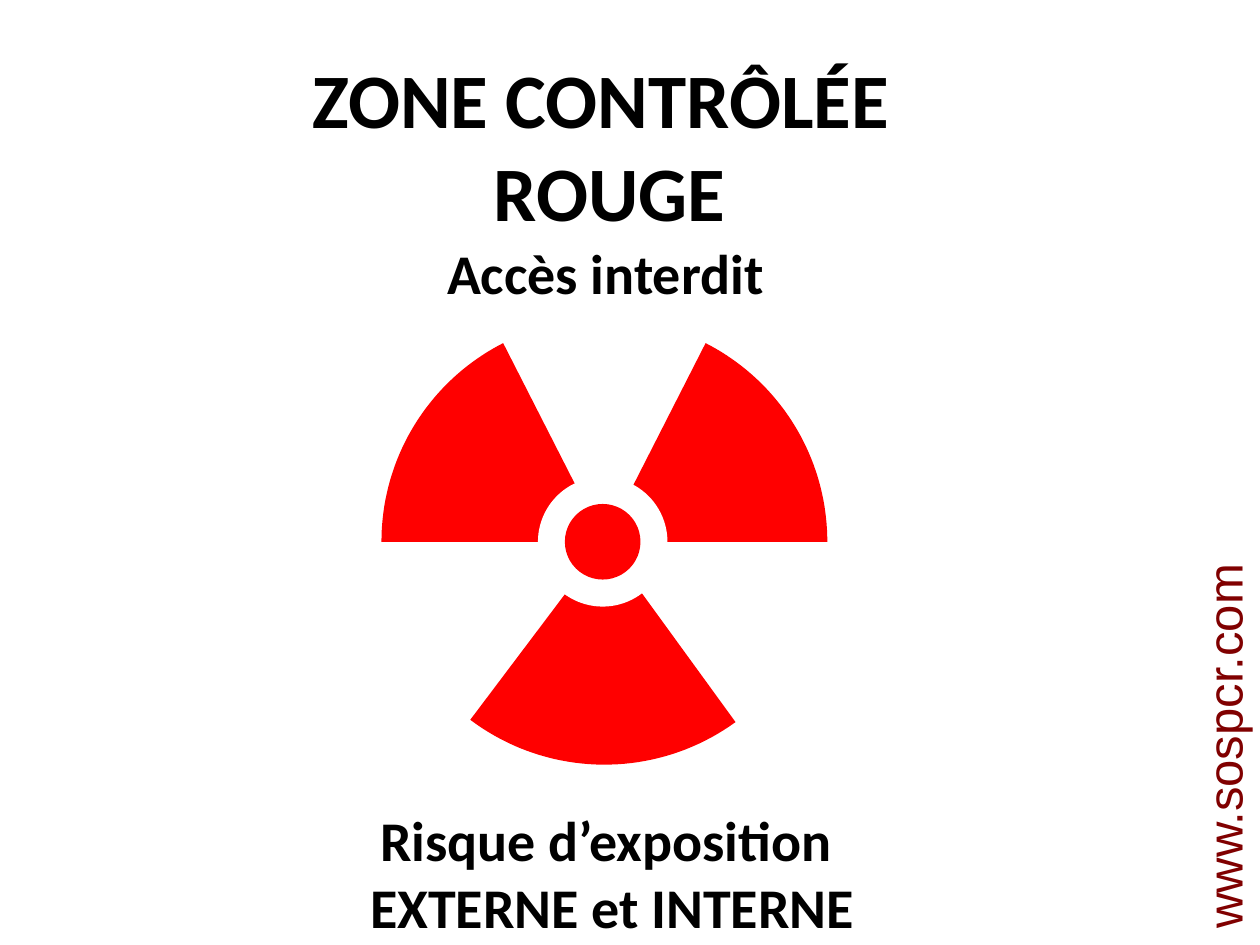
from math import cos, radians, sin

from pptx import Presentation
from pptx.dml.color import RGBColor
from pptx.enum.shapes import MSO_SHAPE
from pptx.enum.text import MSO_ANCHOR, MSO_AUTO_SIZE, PP_ALIGN
from pptx.util import Pt

COLORS = {"red": "FF0000", "white": "FFFFFF", "black": "000000", "site": "800000"}


def paint(sp, color):
    sp.shadow.inherit = False
    sp.fill.solid()
    sp.fill.fore_color.rgb = RGBColor.from_string(COLORS[color])
    sp.line.fill.background()


def place(sp, box):
    sp.left, sp.top, sp.width, sp.height = (Pt(v) for v in box)


def write(sp, lines, size, font="Calibri", color="black", bold=True, wrap=False):
    tf = sp.text_frame
    tf.word_wrap = wrap
    tf.auto_size = MSO_AUTO_SIZE.NONE
    tf.vertical_anchor = MSO_ANCHOR.TOP
    for i, line in enumerate(lines):
        p = tf.add_paragraph() if i else tf.paragraphs[0]
        p.alignment = PP_ALIGN.CENTER
        r = p.add_run()
        r.text = line
        r.font.name = font
        r.font.size = Pt(size)
        r.font.bold = bold
        r.font.color.rgb = RGBColor.from_string(COLORS[color])


def add_title(s, box):
    sp = s.shapes.title
    place(sp, box)
    write(sp, ["ZONE CONTRÔLÉE ", "ROUGE"], 44, wrap=True)


def add_label(s, box, lines, size=32, **style):
    sp = s.shapes.add_textbox(*(Pt(v) for v in box))
    write(sp, lines, size, **style)
    return sp


def add_blade(group, cx, cy, radius, start, end, steps=40):
    angles = [radians(start + (end - start) * i / steps) for i in range(steps + 1)]
    arc = [(Pt(cx + radius * cos(a)), Pt(cy + radius * sin(a))) for a in angles]
    builder = group.shapes.build_freeform(Pt(cx), Pt(cy))
    builder.add_line_segments(arc, close=True)
    paint(builder.convert_to_shape(), "red")


def add_disc(group, cx, cy, diameter, color):
    corner = (cx - diameter / 2, cy - diameter / 2)
    sp = group.shapes.add_shape(
        MSO_SHAPE.OVAL, *(Pt(v) for v in (*corner, diameter, diameter)))
    paint(sp, color)


def add_trefoil(s, box):
    left, top, width, height = box
    cx, cy, radius = left + width / 2, top + height - 129, width / 2
    group = s.shapes.add_group_shape()
    for start, end in ((180, 243), (54, 127), (297, 360)):
        add_blade(group, cx, cy, radius, start, end)
    add_disc(group, cx - 1, cy, 74, "white")
    add_disc(group, cx - 1, cy, 43.2, "red")


def main():
    prs = Presentation()
    prs.slide_width, prs.slide_height = Pt(720), Pt(540)
    s = prs.slides.add_slide(prs.slide_layouts[5])
    site = add_label(s, (586, 406, 226, 41), ["www.sospcr.com"], 28,
                     font="Arial", color="site", bold=False)
    site.rotation = 270
    add_trefoil(s, (218, 195.6, 254.8, 243))
    add_title(s, (88, 26, 521, 114))
    add_label(s, (247, 133, 198, 46), ["Accès interdit"])
    add_label(s, (204.5, 456.5, 291, 85), ["Risque d’exposition ", "EXTERNE et INTERNE"])
    prs.save("out.pptx")


if __name__ == "__main__":
    main()
